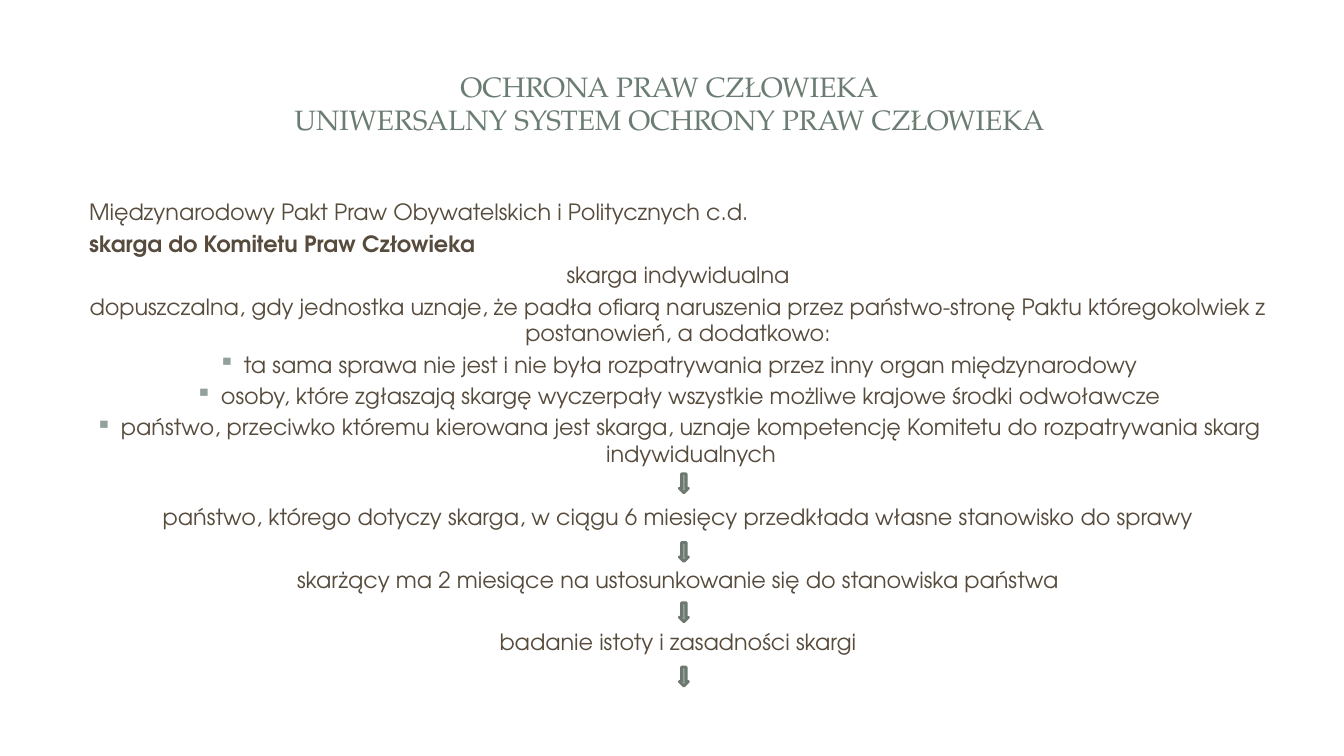
from lxml import etree
from pptx import Presentation
from pptx.dml.color import RGBColor
from pptx.enum.shapes import MSO_SHAPE
from pptx.enum.text import MSO_ANCHOR, PP_ALIGN
from pptx.oxml.ns import qn
from pptx.util import Cm, Pt

DOWN = MSO_SHAPE.DOWN_ARROW
TOP, MIDDLE = MSO_ANCHOR.TOP, MSO_ANCHOR.MIDDLE
LEFT, CENTER = PP_ALIGN.LEFT, PP_ALIGN.CENTER

GREEN = RGBColor(0x6B, 0x7D, 0x72)
BROWN = RGBColor(0x56, 0x4B, 0x3C)
SAGE = RGBColor(0x93, 0xA2, 0x99)
EDGE = RGBColor(0x6D, 0x78, 0x71)

SERIF = "TeX Gyre Pagella"
SANS = "TeX Gyre Adventor"

TITLE = "OCHRONA PRAW CZŁOWIEKA\vUNIWERSALNY SYSTEM OCHRONY PRAW CZŁOWIEKA"
HEADS = [
    ("Międzynarodowy Pakt Praw Obywatelskich i Politycznych c.d.", False),
    ("skarga do Komitetu Praw Człowieka", True),
]
INTRO = [
    "skarga indywidualna",
    "dopuszczalna, gdy jednostka uznaje, że padła ofiarą naruszenia przez "
    "państwo-stronę Paktu któregokolwiek z postanowień, a dodatkowo:",
]
TERMS = [
    "ta sama sprawa nie jest i nie była rozpatrywania przez inny organ międzynarodowy",
    "osoby, które zgłaszają skargę wyczerpały wszystkie możliwe krajowe środki odwoławcze",
    "państwo, przeciwko któremu kierowana jest skarga, uznaje kompetencję "
    "Komitetu do rozpatrywania skarg indywidualnych",
]
STEPS = [
    "państwo, którego dotyczy skarga, w ciągu 6 miesięcy przedkłada własne stanowisko do sprawy",
    "skarżący ma 2 miesiące na ustosunkowanie się do stanowiska państwa",
    "badanie istoty i zasadności skargi",
]
ARROW_TOPS = [11.94, 13.67, 15.19, 16.81]


class Deck:
    gap = 3.2
    step_gap = 25.6

    def __init__(self):
        self.file = Presentation()
        self.file.slide_width = Cm(33.87)
        self.file.slide_height = Cm(19.05)
        self.slide = self.file.slides.add_slide(self.file.slide_layouts[6])

    def frame(self, x, y, w, h, anchor):
        box = self.slide.shapes.add_textbox(Cm(x), Cm(y), Cm(w), Cm(h))
        box.text_frame.word_wrap = True
        box.text_frame.vertical_anchor = anchor
        return box.text_frame

    def style(self, para, font, size, color, bold=False):
        for run in para.runs:
            run.font.name = font
            run.font.size = Pt(size)
            run.font.bold = bold
            run.font.color.rgb = color

    def title(self, text):
        frame = self.frame(1.57, 1.14, 30.61, 2.9, MIDDLE)
        frame.text = text
        para = frame.paragraphs[0]
        para.alignment = CENTER
        self.style(para, SERIF, 20, GREEN)

    def line(self, frame, text, align=CENTER, bold=False, gap=gap, dot=False):
        para = frame.paragraphs[0]
        if para.runs:
            para = frame.add_paragraph()
        para.text = text
        para.alignment = align
        para.space_before = Pt(gap)
        self.style(para, SANS, 16, BROWN, bold)
        self.indent(para, dot)

    def indent(self, para, dot):
        props = para._p.get_or_add_pPr()
        props.set("marL", str(Cm(0.95 if dot else 0.3)))
        props.set("indent", str(Cm(-0.64 if dot else 0)))
        if dot:
            tint = etree.SubElement(props, qn("a:buClr"))
            etree.SubElement(tint, qn("a:srgbClr")).set("val", str(SAGE))
            etree.SubElement(props, qn("a:buChar")).set("char", "▪")
        else:
            etree.SubElement(props, qn("a:buNone"))

    def arrow(self, top):
        shape = self.slide.shapes.add_shape(DOWN, Cm(17.12), Cm(top), Cm(0.23), Cm(0.48))
        shape.shadow.inherit = False
        shape.fill.solid()
        shape.fill.fore_color.rgb = SAGE
        shape.line.color.rgb = EDGE
        shape.line.width = Pt(2)


def main():
    deck = Deck()
    deck.title(TITLE)
    body = deck.frame(1.7, 4.88, 30.48, 13.34, TOP)
    for text, bold in HEADS:
        deck.line(body, text, align=LEFT, bold=bold)
    for text in INTRO:
        deck.line(body, text)
    for text in TERMS:
        deck.line(body, text, dot=True)
    for text in STEPS:
        deck.line(body, text, gap=deck.step_gap)
    for top in ARROW_TOPS:
        deck.arrow(top)
    deck.file.save("out.pptx")


if __name__ == "__main__":
    main()
